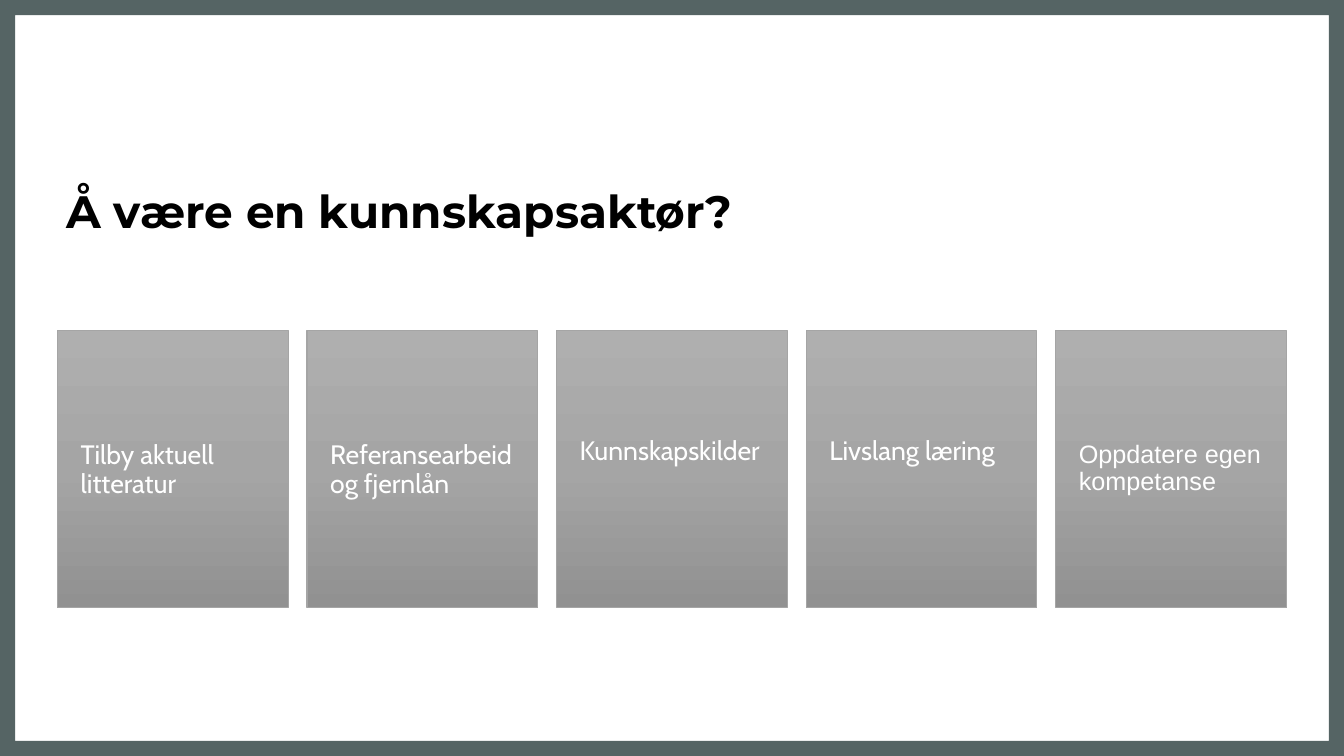
from copy import deepcopy

from pptx import Presentation
from pptx.dml.color import RGBColor
from pptx.enum.shapes import MSO_SHAPE
from pptx.enum.text import MSO_ANCHOR, PP_ALIGN
from pptx.oxml.ns import qn
from pptx.util import Inches, Pt

FRAME = MSO_SHAPE.FRAME
RECTANGLE = MSO_SHAPE.RECTANGLE
TOP = MSO_ANCHOR.TOP
LEFT = PP_ALIGN.LEFT

SLIDE_WIDTH, SLIDE_HEIGHT = 13.33, 7.5
CARD_WIDTH, CARD_STEP = 2.29, 2.475
CARD_GRADIENT = [(0, "AFAFAF"), (0.5, "A5A5A5"), (1, "919191")]
CARDS = [
    ("Tilby aktuell litteratur", "Cabin", 19),
    ("Referansearbeid og fjernlån", "Cabin", 19),
    ("Kunnskapskilder", "Cabin", 19),
    ("Livslang læring", "Cabin", 19),
    ("Oppdatere egen kompetanse", "Arial", 18),
]


def color(value):
    return RGBColor.from_string(value)


def add_text(page, box, text, font, size, ink, margins, spacing, bold=False):
    """Place one wrapped paragraph; box and margins are in inches."""
    textbox = page.shapes.add_textbox(*map(Inches, box))
    frame = textbox.text_frame
    frame.word_wrap = True
    frame.vertical_anchor = TOP
    (frame.margin_left, frame.margin_top,
     frame.margin_right, frame.margin_bottom) = map(Inches, margins)
    para = frame.paragraphs[0]
    para.alignment = LEFT
    para.line_spacing = spacing
    span = para.add_run()
    span.text = text
    span.font.name = font
    span.font.size = Pt(size)
    span.font.bold = bold
    span.font.color.rgb = color(ink)


def fill_gradient(shape, stops):
    """Fill a shape from top to bottom with three (position, colour) stops."""
    shape.fill.gradient()
    shape.fill.gradient_angle = 270
    stop_list = shape._element.spPr.find(qn("a:gradFill")).find(qn("a:gsLst"))
    stop_list.append(deepcopy(stop_list[-1]))
    for stop, (position, value) in zip(shape.fill.gradient_stops, stops):
        stop.position = position
        stop.color.rgb = color(value)


def add_border(page, box):
    border = page.shapes.add_shape(FRAME, *map(Inches, box))
    border.adjustments[0] = 0.02
    border.shadow.inherit = False
    border.fill.solid()
    border.fill.fore_color.rgb = color("556464")
    border.line.fill.background()


def add_title(page, box):
    add_text(page, box, "Å være en kunnskapsaktør?", "Montserrat", 32.4,
             "000000", (0.1, 0.05, 0.1, 0.05), 1.08, bold=True)


def add_card(page, box, text, font, size):
    left, top, width, height = box
    card = page.shapes.add_shape(RECTANGLE, *map(Inches, box))
    card.shadow.inherit = False
    fill_gradient(card, CARD_GRADIENT)
    card.line.color.rgb = color("A5A5A5")
    card.line.width = Pt(0.75)
    label_box = (left, top + 0.4 * height, width, 0.6 * height)
    add_text(page, label_box, text, font, size, "FFFFFF",
             (0.23, 0, 0.23, 0.36), 0.9)


def add_card_row(page, left, top, height):
    for index, (text, font, size) in enumerate(CARDS):
        box = (left + index * CARD_STEP, top, CARD_WIDTH, height)
        add_card(page, box, text, font, size)


def main():
    deck = Presentation()
    deck.slide_width = Inches(SLIDE_WIDTH)
    deck.slide_height = Inches(SLIDE_HEIGHT)
    page = deck.slides.add_slide(deck.slide_layouts[6])
    page.background.fill.solid()
    page.background.fill.fore_color.rgb = color("FFFFFF")
    add_border(page, (0, 0, SLIDE_WIDTH, SLIDE_HEIGHT))
    add_title(page, (0.56, 1.72, 12.2, 0.65))
    add_card_row(page, 0.57, 3.28, 2.75)
    deck.save("out.pptx")


if __name__ == "__main__":
    main()
